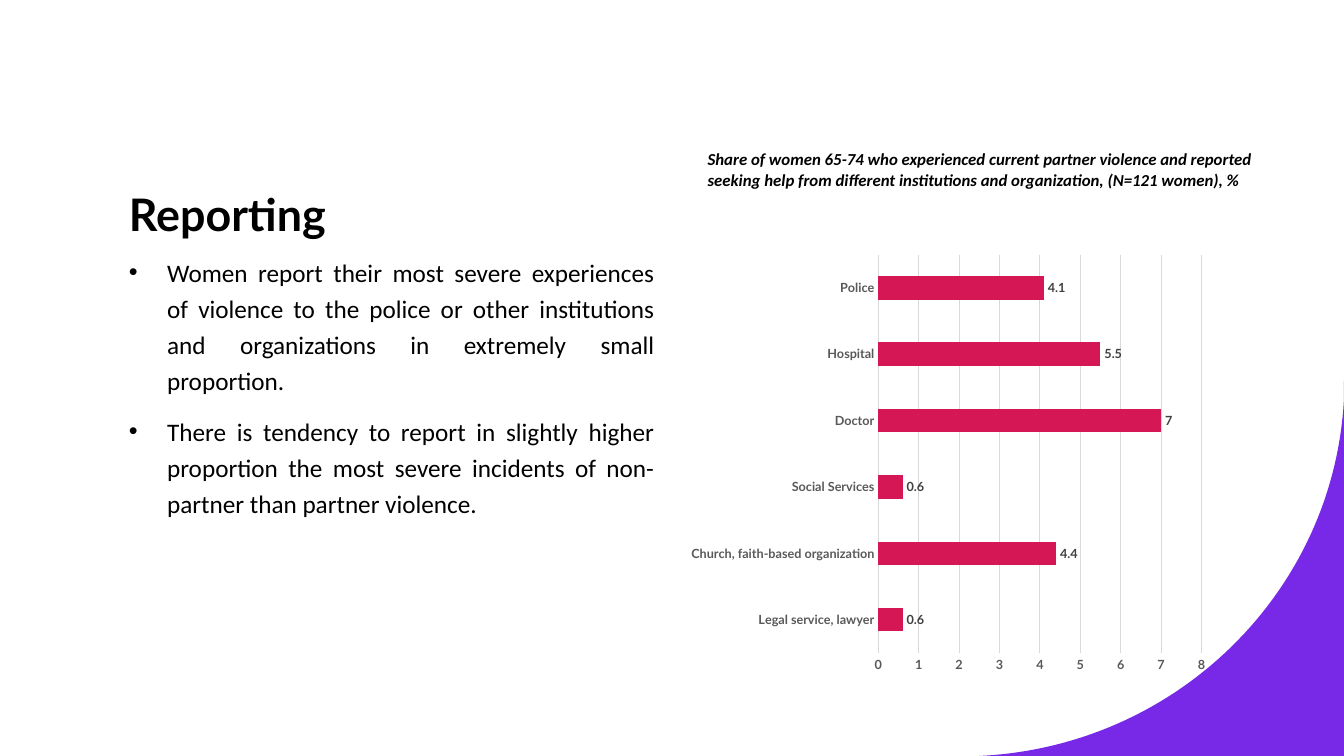
from dataclasses import dataclass

from lxml import etree
from pptx import Presentation
from pptx.chart.data import CategoryChartData
from pptx.dml.color import RGBColor
from pptx.enum.chart import XL_CHART_TYPE, XL_LABEL_POSITION, XL_TICK_MARK
from pptx.enum.text import MSO_ANCHOR, MSO_AUTO_SIZE, PP_ALIGN
from pptx.oxml.ns import qn
from pptx.util import Inches, Pt

BAR_CLUSTERED = XL_CHART_TYPE.BAR_CLUSTERED
OUTSIDE_END = XL_LABEL_POSITION.OUTSIDE_END
NO_TICK = XL_TICK_MARK.NONE
TOP, BOTTOM = MSO_ANCHOR.TOP, MSO_ANCHOR.BOTTOM
LEFT, JUSTIFY = PP_ALIGN.LEFT, PP_ALIGN.JUSTIFY
NO_AUTOFIT, GROW = MSO_AUTO_SIZE.NONE, MSO_AUTO_SIZE.SHAPE_TO_FIT_TEXT

WIDTH, HEIGHT = Inches(13.33), Inches(7.5)
PURPLE, CRIMSON, BLACK = "7829E7", "D51756", "000000"
AXIS_GRAY, LABEL_GRAY, GRID_GRAY = "595959", "404040", "D9D9D9"
BULLET_INDENT = Inches(0.38)
CURVE_STEPS = 60

# Places are in hundredths of the slide's width and height.
MARGIN, CONTENT_TOP, CONTENT_HEIGHT = 8.85, 32.53, 57.6


@dataclass
class Box:
    left: float
    top: float
    width: float
    height: float

    def lengths(self) -> tuple[int, int, int, int]:
        return across(self.left), down(self.top), across(self.width), down(self.height)


@dataclass
class TextBlock:
    box: Box
    paragraphs: list[str]
    font: str
    size: int
    bold: bool = False
    italic: bool = False
    anchor: MSO_ANCHOR = TOP
    autofit: MSO_AUTO_SIZE = NO_AUTOFIT
    alignment: PP_ALIGN = LEFT
    line_spacing: float = 1.0
    space_before: int = 0
    bulleted: bool = False


TEXT_BLOCKS = [
    TextBlock(Box(MARGIN, 10.53, 81.62, 22), ["Reporting"], "Lato", 32,
              bold=True, anchor=BOTTOM, line_spacing=1.1),
    TextBlock(
        Box(MARGIN, CONTENT_TOP, 40.59, CONTENT_HEIGHT),
        ["Women report their most severe experiences of violence to the police or "
         "other institutions and organizations in extremely small proportion.",
         "There is tendency to report in slightly higher proportion the most severe "
         "incidents of non-partner than partner violence."],
        "Calibri", 18, alignment=JUSTIFY, line_spacing=1.2, space_before=10,
        bulleted=True),
    TextBlock(
        Box(51.91, 19.07, 42.61, 6.67),
        ["Share of women 65-74 who experienced current partner violence and reported "
         "seeking help from different institutions and organization, "
         "(N=121 women), %"],
        "Calibri", 12, bold=True, italic=True, autofit=GROW),
]

CHART_BOX = Box(50.64, CONTENT_TOP, 39.83, CONTENT_HEIGHT)
HELP_SHARES = {
    "Legal service, lawyer": 0.6,
    "Church, faith-based organization": 4.4,
    "Social Services": 0.6,
    "Doctor": 7,
    "Hospital": 5.5,
    "Police": 4.1,
}

CORNER_CURVE = [(72.84, 100), (87.55, 98.8), (99.25, 78.27), (100, 52.8)]
CORNER_TOP = (100, 50.4)
CORNER_END = (100, 100)


def across(share: float) -> int:
    return round(WIDTH * share / 100)


def down(share: float) -> int:
    return round(HEIGHT * share / 100)


def color(value: str) -> RGBColor:
    return RGBColor.from_string(value)


def style_font(font, name: str, size: int, value: str, bold=False, italic=False) -> None:
    font.name, font.size = name, Pt(size)
    font.bold, font.italic = bold, italic
    font.color.rgb = color(value)


def curve_point(share: float) -> tuple[float, float]:
    """Return the point of the cubic corner curve at a share of its run."""
    rest = 1 - share
    weights = rest**3, 3 * rest**2 * share, 3 * rest * share**2, share**3
    x, y = (sum(weight * value for weight, value in zip(weights, values))
            for values in zip(*CORNER_CURVE))
    return x, y


def add_corner(slide) -> None:
    curve = [curve_point(step / CURVE_STEPS) for step in range(CURVE_STEPS + 1)]
    start, *points = [(across(x), down(y)) for x, y in [*curve, CORNER_TOP, CORNER_END]]
    builder = slide.shapes.build_freeform(*start)
    builder.add_line_segments(points, close=True)
    corner = builder.convert_to_shape()
    corner.shadow.inherit = False
    corner.fill.solid()
    corner.fill.fore_color.rgb = color(PURPLE)
    corner.line.fill.background()


def add_bullet(paragraph) -> None:
    properties = paragraph._p.get_or_add_pPr()
    properties.set("marL", str(BULLET_INDENT))
    properties.set("indent", str(-BULLET_INDENT))
    etree.SubElement(properties, qn("a:buFont"), typeface="Arial")
    etree.SubElement(properties, qn("a:buChar"), char="•")


def add_text(slide, block: TextBlock) -> None:
    frame = slide.shapes.add_textbox(*block.box.lengths()).text_frame
    frame.word_wrap = True
    frame.auto_size = block.autofit
    frame.vertical_anchor = block.anchor
    for index, text in enumerate(block.paragraphs):
        paragraph = frame.add_paragraph() if index else frame.paragraphs[0]
        paragraph.alignment = block.alignment
        paragraph.line_spacing = block.line_spacing
        paragraph.space_before = Pt(block.space_before)
        if block.bulleted:
            add_bullet(paragraph)
        run = paragraph.add_run()
        run.text = text
        style_font(run.font, block.font, block.size, BLACK, block.bold, block.italic)


def style_line(line, value: str) -> None:
    line.color.rgb = color(value)
    line.width = Pt(0.75)


def add_help_chart(slide) -> None:
    data = CategoryChartData()
    data.categories = list(HELP_SHARES)
    data.add_series("Series 1", list(HELP_SHARES.values()))
    chart = slide.shapes.add_chart(BAR_CLUSTERED, *CHART_BOX.lengths(), data).chart
    chart.has_legend = chart.has_title = False
    style_font(chart.font, "Lato", 10, BLACK, bold=True)

    for axis in (chart.category_axis, chart.value_axis):
        axis.major_tick_mark = axis.minor_tick_mark = NO_TICK
        style_font(axis.tick_labels.font, "Lato", 9, AXIS_GRAY, bold=True)
    chart.category_axis.has_major_gridlines = False
    style_line(chart.category_axis.format.line, GRID_GRAY)
    chart.value_axis.has_major_gridlines = True
    style_line(chart.value_axis.major_gridlines.format.line, GRID_GRAY)
    chart.value_axis.format.line.fill.background()

    plot = chart.plots[0]
    plot.gap_width = 182
    plot.vary_by_categories = False
    bars = plot.series[0]
    bars.format.fill.solid()
    bars.format.fill.fore_color.rgb = color(CRIMSON)
    labels = bars.data_labels
    labels.show_value = True
    labels.position = OUTSIDE_END
    style_font(labels.font, "Lato", 9, LABEL_GRAY, bold=True)


def main() -> None:
    presentation = Presentation()
    presentation.slide_width, presentation.slide_height = WIDTH, HEIGHT
    slide = presentation.slides.add_slide(presentation.slide_layouts[6])
    add_corner(slide)
    add_help_chart(slide)
    for block in TEXT_BLOCKS:
        add_text(slide, block)
    presentation.save("out.pptx")


if __name__ == "__main__":
    main()
